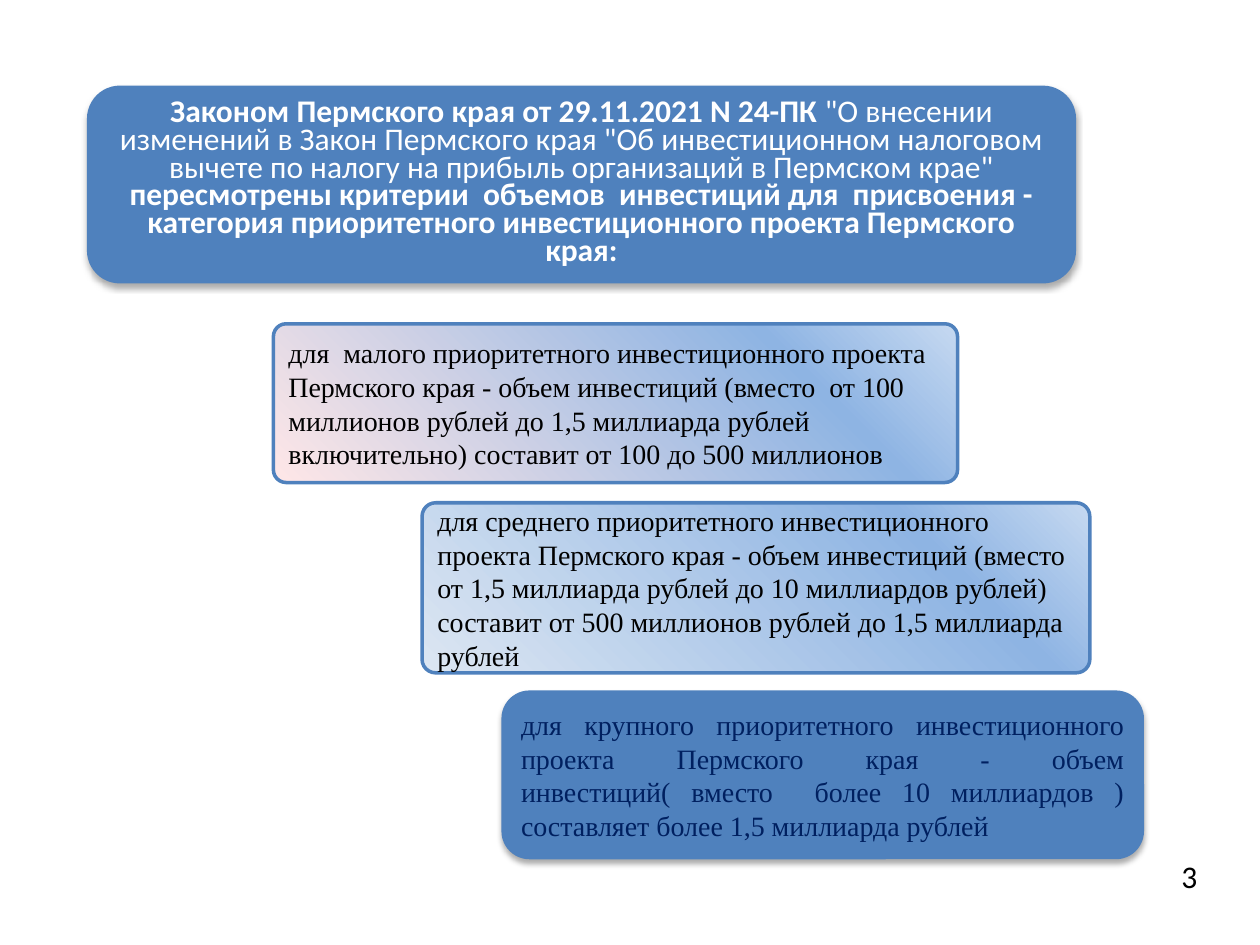
from dataclasses import dataclass

from lxml import etree
from pptx import Presentation
from pptx import util as u
from pptx.dml.color import RGBColor
from pptx.enum import shapes, text
from pptx.oxml import ns


@dataclass(frozen=True)
class Theme:
    """Colours, fonts and type sizes of the slide."""
    blue: str = "4F81BD"
    navy: str = "002060"
    white: str = "FFFFFF"
    black: str = "000000"
    pale: str = "C6D9F1"
    sky: str = "8EB4E3"
    rose: str = "FFE7E7"
    mist: str = "DCE6F2"
    sans: str = "Calibri"
    serif: str = "Times New Roman"
    large: int = 18
    body: int = 16


THEME = Theme()

TITLE = (
    ("Законом Пермского края от 29.11.2021 N 24-ПК ", True),
    ("\"О внесении изменений в Закон Пермского края \"Об инвестиционном налоговом "
     "вычете по налогу на прибыль организаций в Пермском крае\" ", False),
    ("пересмотрены критерии  объемов  инвестиций для  присвоения - категория "
     "приоритетного инвестиционного проекта Пермского края:", True),
)
SMALL = ("для  малого приоритетного инвестиционного проекта Пермского края - объем "
         "инвестиций (вместо  от 100 миллионов рублей до 1,5 миллиарда рублей "
         "включительно) составит от 100 до 500 миллионов")
MEDIUM = ("для среднего приоритетного инвестиционного проекта Пермского края - объем "
          "инвестиций (вместо  от 1,5 миллиарда рублей до 10 миллиардов рублей) "
          "составит от 500 миллионов рублей до 1,5 миллиарда рублей")
LARGE = ("для крупного приоритетного инвестиционного проекта Пермского края - объем "
         "инвестиций( вместо  более 10 миллиардов ) составляет более 1,5 миллиарда "
         "рублей")


def style_run(run, font, size, colour, bold=False):
    """Set the typeface, size, colour and weight of a run."""
    run.font.name = font
    run.font.size = u.Pt(size)
    run.font.color.rgb = RGBColor.from_string(colour)
    run.font.bold = bold


def add_child(parent, tag, **attributes):
    """Append a DrawingML element and return it."""
    child = etree.SubElement(parent, ns.qn(f"a:{tag}"))
    for name, value in attributes.items():
        child.set(name, str(value))
    return child


def set_margins(frame, side, top):
    """Wrap and centre the text of a frame inside its margins."""
    frame.word_wrap = True
    frame.vertical_anchor = text.MSO_ANCHOR.MIDDLE
    frame.margin_left = frame.margin_right = u.Inches(side)
    frame.margin_top = frame.margin_bottom = u.Inches(top)


def add_rounded(page, box):
    """Add an unshadowed rounded rectangle with text margins."""
    shape = page.shapes.add_shape(
        shapes.MSO_SHAPE.ROUNDED_RECTANGLE, *map(u.Inches, box))
    shape.shadow.inherit = False
    set_margins(shape.text_frame, 0.09, 0.04)
    return shape


def add_solid_panel(page, box):
    """Add a blue panel without outline that casts a soft shadow."""
    panel = add_rounded(page, box)
    panel.fill.solid()
    panel.fill.fore_color.rgb = RGBColor.from_string(THEME.blue)
    panel.line.fill.background()
    effects = panel._element.spPr.find(ns.qn("a:effectLst"))
    shadow = add_child(effects, "outerShdw", blurRad=u.Pt(3.5), dist=u.Pt(2.2),
                       dir=90 * 60000, rotWithShape=0)
    colour = add_child(shadow, "srgbClr", val=THEME.black)
    add_child(colour, "alpha", val=32000)
    return panel


def add_gradient_panel(page, box, far_colour):
    """Add an outlined panel shaded radially from its top right corner."""
    panel = add_rounded(page, box)
    panel.adjustments[0] = 0.08
    panel.line.color.rgb = RGBColor.from_string(THEME.blue)
    panel.line.width = u.Pt(2)
    properties = panel._element.spPr
    gradient = add_child(properties, "gradFill", rotWithShape=1)
    stops = add_child(gradient, "gsLst")
    for place, colour in ((0, THEME.pale), (24, THEME.sky), (100, far_colour)):
        stop = add_child(stops, "gs", pos=place * 1000)
        add_child(stop, "srgbClr", val=colour)
    path_fill = add_child(gradient, "path", path="circle")
    add_child(path_fill, "fillToRect", l=100000, b=100000)
    properties.find(ns.qn("a:prstGeom")).addnext(gradient)
    return panel


def write_body(panel, wording, colour, align=text.PP_ALIGN.LEFT):
    """Fill a panel with one paragraph of serif text."""
    para = panel.text_frame.paragraphs[0]
    para.text = wording
    para.alignment = align
    style_run(para.runs[0], THEME.serif, THEME.body, colour)


def add_title(page, box):
    """Place the panel that names the law."""
    para = add_solid_panel(page, box).text_frame.paragraphs[0]
    para.alignment = text.PP_ALIGN.CENTER
    para.line_spacing = u.Pt(15.8)
    for wording, bold in TITLE:
        span = para.add_run()
        span.text = wording
        style_run(span, THEME.sans, THEME.large, THEME.white, bold)


def add_large_project(page, box):
    """Place the panel on large projects."""
    write_body(add_solid_panel(page, box), LARGE, THEME.navy, text.PP_ALIGN.JUSTIFY)


def add_outlined_project(page, box, wording, far_colour):
    """Place a shaded panel on small or medium projects."""
    write_body(add_gradient_panel(page, box, far_colour), wording, THEME.black)


def add_page_number(page, box, number):
    """Place the page number."""
    frame = page.shapes.add_textbox(*map(u.Inches, box)).text_frame
    set_margins(frame, 0.1, 0.05)
    para = frame.paragraphs[0]
    para.text = str(number)
    para.alignment = text.PP_ALIGN.CENTER
    para.line_spacing = u.Pt(21)
    style_run(para.runs[0], THEME.sans, THEME.large, THEME.black)


def main():
    """Build the slide and save it."""
    deck = Presentation()
    deck.slide_width, deck.slide_height = u.Inches(10), u.Inches(7.5)
    page = deck.slides.add_slide(deck.slide_layouts[6])
    add_title(page, (0.69, 0.68, 7.85, 1.57))
    add_large_project(page, (3.98, 5.48, 5.1, 1.34))
    add_outlined_project(page, (2.17, 2.57, 5.43, 1.26), SMALL, THEME.rose)
    add_outlined_project(page, (3.35, 3.99, 5.3, 1.35), MEDIUM, THEME.mist)
    add_page_number(page, (9.1, 6.61, 0.68, 0.69), 3)
    deck.save("out.pptx")


if __name__ == "__main__":
    main()
